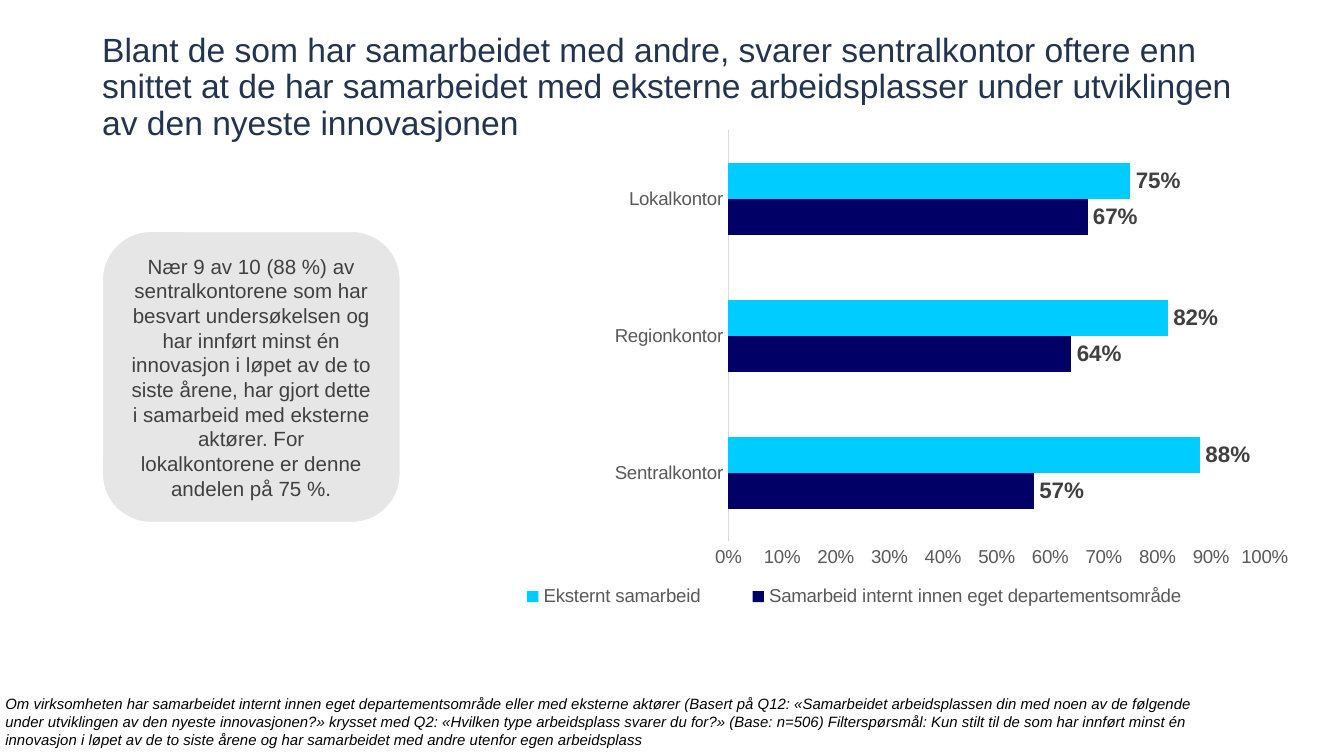
import pptx
import pptx.chart.data
import pptx.dml.color
import pptx.enum.chart
import pptx.enum.shapes
import pptx.enum.text
import pptx.oxml
import pptx.oxml.ns
import pptx.util
from pptx.util import Inches

COLORS = {
    "title": "23344F",
    "note": "000000",
    "dark_text": "404040",
    "axis_text": "595959",
    "axis_line": "D9D9D9",
    "callout": "E7E6E6",
    "white": "FFFFFF",
    "internal": "000066",
    "external": "00CCFF",
}
FONT = "Arial"

TITLE = (
    "Blant de som har samarbeidet med andre, svarer sentralkontor oftere enn "
    "snittet at de har samarbeidet med eksterne arbeidsplasser under utviklingen "
    "av den nyeste innovasjonen"
)
CALLOUT = (
    "Nær 9 av 10 (88 %) av sentralkontorene som har besvart undersøkelsen og har "
    "innført minst én innovasjon i løpet av de to siste årene, har gjort dette i "
    "samarbeid med eksterne aktører. For lokalkontorene er denne andelen på 75 %."
)
NOTE = (
    "Om virksomheten har samarbeidet internt innen eget departementsområde eller "
    "med eksterne aktører (Basert på Q12: «Samarbeidet arbeidsplassen din med noen "
    "av de følgende under utviklingen av den nyeste innovasjonen?» krysset med Q2: "
    "«Hvilken type arbeidsplass svarer du for?» (Base: n=506) Filterspørsmål: Kun "
    "stilt til de som har innført minst én innovasjon i løpet av de to siste årene "
    "og har samarbeidet med andre utenfor egen arbeidsplass"
)
CATEGORIES = ["Sentralkontor", "Regionkontor", "Lokalkontor"]
SERIES = [
    ("Samarbeid internt innen eget departementsområde", [0.57, 0.64, 0.67], "internal"),
    ("Eksternt samarbeid", [0.88, 0.82, 0.75], "external"),
]


def rgb(name):
    return pptx.dml.color.RGBColor.from_string(COLORS[name])


def format_font(font, size, color, bold=False, italic=False):
    font.name = FONT
    font.size = pptx.util.Pt(size)
    font.bold = bold
    font.italic = italic
    font.color.rgb = rgb(color)


def write_text(shape, text, size, color, align="LEFT", anchor="TOP",
               margin=None, line_spacing=None, italic=False):
    frame = shape.text_frame
    frame.word_wrap = True
    frame.auto_size = pptx.enum.text.MSO_AUTO_SIZE.NONE
    frame.vertical_anchor = getattr(pptx.enum.text.MSO_ANCHOR, anchor)
    if margin is not None:
        frame.margin_left = frame.margin_right = Inches(margin)
        frame.margin_top = frame.margin_bottom = Inches(margin)
    paragraph = frame.paragraphs[0]
    paragraph.alignment = getattr(pptx.enum.text.PP_ALIGN, align)
    paragraph.space_before = pptx.util.Pt(0)
    if line_spacing:
        paragraph.line_spacing = line_spacing
    run = paragraph.add_run()
    run.text = text
    format_font(run.font, size, color, italic=italic)


def set_layout(parent, part_box, chart_box, inner=False):
    """Place a plot area or legend, in inches from the chart's top left corner."""
    for old_layout in parent.findall(pptx.oxml.ns.qn("c:layout")):
        parent.remove(old_layout)
    chart_width, chart_height = chart_box[2:]
    sizes = (chart_width, chart_height, chart_width, chart_height)
    x, y, width, height = (part / size for part, size in zip(part_box, sizes))
    target = '<c:layoutTarget val="inner"/>' if inner else ""
    layout = pptx.oxml.parse_xml(
        f'<c:layout {pptx.oxml.ns.nsdecls("c")}><c:manualLayout>{target}'
        '<c:xMode val="edge"/><c:yMode val="edge"/>'
        f'<c:x val="{x}"/><c:y val="{y}"/><c:w val="{width}"/><c:h val="{height}"/>'
        "</c:manualLayout></c:layout>"
    )
    # The layout leads a plot area but follows the position of a legend
    parent.insert(0 if inner else 1, layout)


def add_title(slide, box):
    title = slide.shapes.title
    title.left, title.top, title.width, title.height = map(Inches, box)
    write_text(title, TITLE, 18, "title", anchor="MIDDLE", margin=0, line_spacing=0.9)


def add_note(slide, box):
    note = slide.shapes.add_textbox(*map(Inches, box))
    write_text(note, NOTE, 8, "note", margin=0, italic=True)


def add_callout(slide, box):
    callout = slide.shapes.add_shape(
        pptx.enum.shapes.MSO_SHAPE.ROUNDED_RECTANGLE, *map(Inches, box))
    callout.shadow.inherit = False
    callout.fill.solid()
    callout.fill.fore_color.rgb = rgb("callout")
    callout.line.color.rgb = rgb("white")
    callout.line.width = pptx.util.Pt(1)
    write_text(callout, CALLOUT, 11, "dark_text", align="CENTER", anchor="MIDDLE")


def add_bar_chart(slide, box):
    data = pptx.chart.data.CategoryChartData(number_format="0%")
    data.categories = CATEGORIES
    for name, values, _ in SERIES:
        data.add_series(name, values)
    chart = slide.shapes.add_chart(
        pptx.enum.chart.XL_CHART_TYPE.BAR_CLUSTERED, *map(Inches, box), data).chart
    format_font(chart.font, 10, "note")
    chart.has_title = False

    # Bars and their labels
    plot = chart.plots[0]
    plot.gap_width = 182
    plot.vary_by_categories = False
    for series, (_, _, color) in zip(plot.series, SERIES):
        series.format.fill.solid()
        series.format.fill.fore_color.rgb = rgb(color)
        labels = series.data_labels
        labels.show_value = True
        labels.number_format = "0%"
        labels.number_format_is_linked = False
        labels.position = pptx.enum.chart.XL_LABEL_POSITION.OUTSIDE_END
        format_font(labels.font, 12, "dark_text", bold=True)

    # Axes
    for axis in (chart.category_axis, chart.value_axis):
        axis.has_major_gridlines = False
        axis.major_tick_mark = pptx.enum.chart.XL_TICK_MARK.NONE
        axis.minor_tick_mark = pptx.enum.chart.XL_TICK_MARK.NONE
        format_font(axis.tick_labels.font, 10, "axis_text")
    chart.category_axis.format.line.color.rgb = rgb("axis_line")
    chart.category_axis.format.line.width = pptx.util.Pt(0.75)
    value_axis = chart.value_axis
    value_axis.format.line.fill.background()
    value_axis.minimum_scale, value_axis.maximum_scale = 0, 1
    value_axis.major_unit = 0.1
    value_axis.tick_labels.number_format = "0%"
    value_axis.tick_labels.number_format_is_linked = False

    # Legend and plot area
    chart.has_legend = True
    chart.legend.position = pptx.enum.chart.XL_LEGEND_POSITION.BOTTOM
    chart.legend.include_in_layout = False
    format_font(chart.legend.font, 10, "axis_text")
    chart_element = chart.element.find(pptx.oxml.ns.qn("c:chart"))
    set_layout(chart_element.find(pptx.oxml.ns.qn("c:legend")),
               (0.15, 3.45, 5.55, 0.34), box)
    set_layout(chart_element.find(pptx.oxml.ns.qn("c:plotArea")),
               (1.99, 0.15, 3.99, 3.06), box, inner=True)


def main():
    presentation = pptx.Presentation()
    # A 16:9 slide
    presentation.slide_width = Inches(10)
    presentation.slide_height = presentation.slide_width * 9 // 16
    slide = presentation.slides.add_slide(presentation.slide_layouts[5])
    add_title(slide, (0.76, 0.49, 8.6, 0.33))
    add_note(slide, (0.04, 5.17, 9, 0.4))
    add_bar_chart(slide, (3.43, 0.82, 6.3, 4.21))
    add_callout(slide, (0.76, 1.72, 2.22, 2.17))
    presentation.save("out.pptx")


if __name__ == "__main__":
    main()
